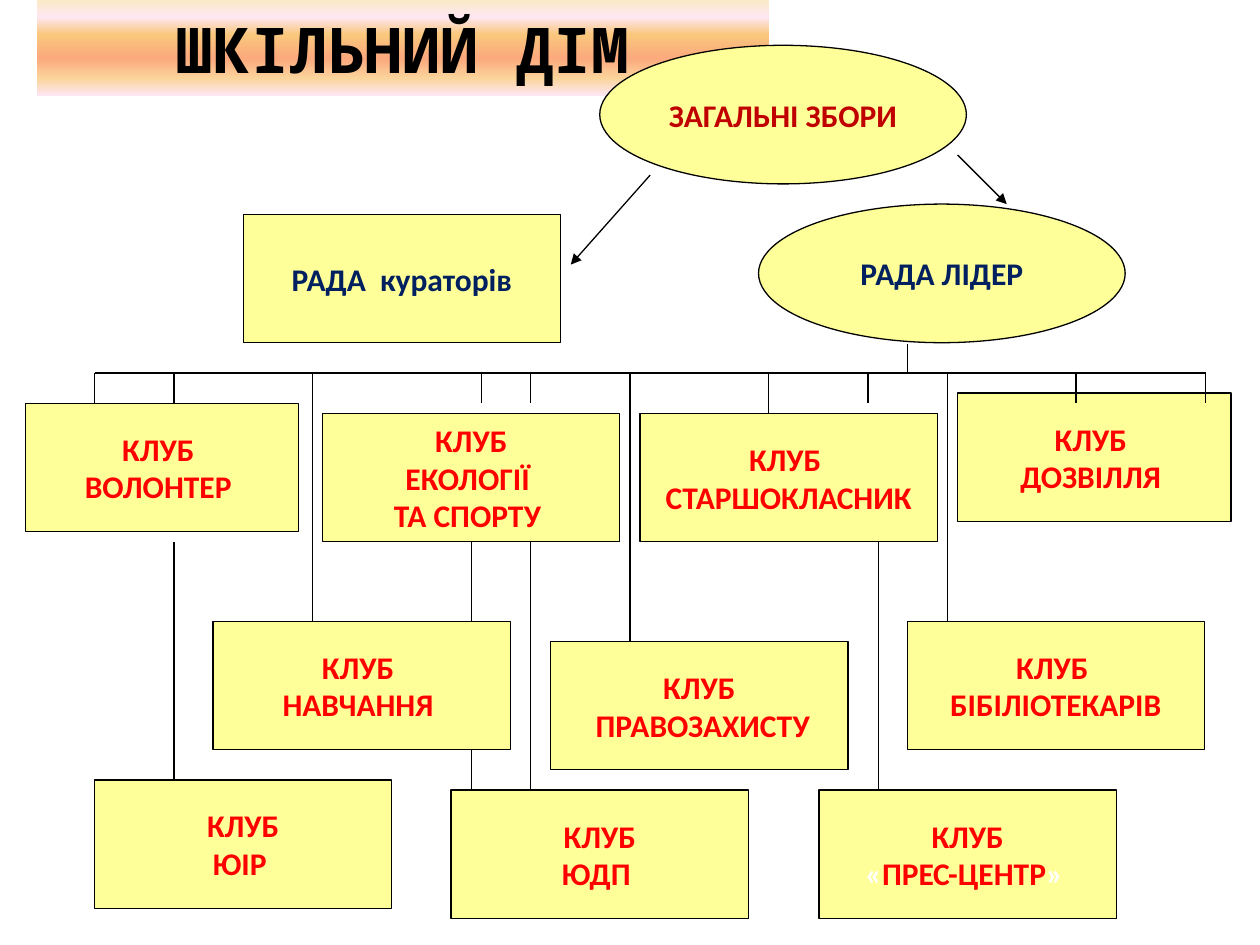
from lxml import etree
from pptx import Presentation
from pptx.dml.color import RGBColor
from pptx.enum import shapes, text
from pptx.oxml.ns import qn
from pptx.util import Inches, Pt

COLORS = {"box": "FFFF99", "line": "000000", "title": "000000", "assembly": "C00000",
          "council": "002060", "club": "FF0000", "quote": "FFFFFF"}
TITLE_STOPS = [(0, "FBEAC7"), (18, "FEE7F2"), (36, "FAC77D"),
               (61, "FBA97D"), (82, "FBD49C"), (100, "FEE7F2")]
RECT, OVAL = shapes.MSO_SHAPE.RECTANGLE, shapes.MSO_SHAPE.OVAL

prs = Presentation()
prs.slide_width, prs.slide_height = Inches(10), Inches(7.5)
s = prs.slides.add_slide(prs.slide_layouts[6])


def add_box(kind, x, y, w, h, lines, color, size=18, font="Calibri"):
    """Add a centred bold label; a line is a string or a list of (text, colour) runs."""
    sp = s.shapes.add_shape(kind, Inches(x), Inches(y), Inches(w), Inches(h))
    sp.shadow.inherit = False
    sp.fill.solid()
    sp.fill.fore_color.rgb = RGBColor.from_string(COLORS["box"])
    sp.line.color.rgb = RGBColor.from_string(COLORS["line"])
    sp.line.width = Pt(0.75)
    tf = sp.text_frame
    tf.word_wrap = False
    tf.vertical_anchor = text.MSO_ANCHOR.MIDDLE
    for i, line in enumerate(lines):
        p = tf.add_paragraph() if i else tf.paragraphs[0]
        p.alignment = text.PP_ALIGN.CENTER
        p.font.name, p.font.size, p.font.bold = font, Pt(size), True
        for content, run_color in [(line, color)] if isinstance(line, str) else line:
            r = p.add_run()
            r.text = content
            r.font.color.rgb = RGBColor.from_string(COLORS[run_color])
    return sp


def add_line(x1, y1, x2, y2, arrow=False):
    c = s.shapes.add_connector(shapes.MSO_CONNECTOR.STRAIGHT,
                               Inches(x1), Inches(y1), Inches(x2), Inches(y2))
    c.line.color.rgb = RGBColor.from_string(COLORS["line"])
    c.line.width = Pt(0.75)
    if arrow:
        etree.SubElement(c.line._get_or_add_ln(), qn("a:tailEnd"), type="triangle")
    etree.SubElement(c._element.spPr, qn("a:effectLst"))


# Title band with a vertical gradient
title = add_box(RECT, 0.29, 0, 5.81, 0.76, ["ШКІЛЬНИЙ ДІМ"], "title", 36, "Noto Sans Mono")
title.line.fill.background()
title.fill.gradient()
title.fill.gradient_angle = 270
stops = title._element.spPr.find(qn("a:gradFill")).find(qn("a:gsLst"))
for old in list(stops):
    stops.remove(old)
for pos, color in TITLE_STOPS:
    gs = etree.SubElement(stops, qn("a:gs"), pos=str(pos * 1000))
    etree.SubElement(gs, qn("a:srgbClr"), val=color)

# Governing bodies
add_box(OVAL, 4.76, 0.36, 2.91, 1.1, ["ЗАГАЛЬНІ ЗБОРИ"], "assembly")
add_box(OVAL, 6.02, 1.62, 2.91, 1.1, ["РАДА ЛІДЕР"], "council")
add_box(RECT, 1.93, 1.7, 2.52, 1.02, ["РАДА  кураторів"], "council")

# Clubs: left, top, width, lines
clubs = [
    (7.6, 3.12, 2.17, ["КЛУБ ", "ДОЗВІЛЛЯ "]),
    (0.2, 3.2, 2.17, ["КЛУБ ", "ВОЛОНТЕР "]),
    (2.56, 3.28, 2.36, ["КЛУБ", "ЕКОЛОГІЇ ", "ТА СПОРТУ "]),
    (5.08, 3.28, 2.36, ["КЛУБ ", "СТАРШОКЛАСНИК"]),
    (1.69, 4.93, 2.36, ["КЛУБ ", "НАВЧАННЯ "]),
    (4.37, 5.09, 2.36, ["КЛУБ", " ПРАВОЗАХИСТУ"]),
    (7.2, 4.93, 2.36, ["КЛУБ ", "БІБІЛІОТЕКАРІВ"]),
    (0.75, 6.19, 2.36, ["КЛУБ", "ЮІР "]),
    (3.58, 6.27, 2.36, ["КЛУБ", "ЮДП "]),
    (6.5, 6.27, 2.36, ["КЛУБ", [("«", "quote"), ("ПРЕС-ЦЕНТР", "club"), ("» ", "quote")]]),
]
for x, y, w, lines in clubs:
    add_box(RECT, x, y, w, 1.02, lines, "club")

# Arrows from the assembly to the two councils
add_line(5.16, 1.39, 4.53, 2.1, arrow=True)
add_line(7.6, 1.23, 7.99, 1.62, arrow=True)

# Bus under the leaders' council, with drops to the clubs
BUS = 2.96
add_line(7.2, 2.73, 7.2, BUS)
add_line(0.75, BUS, 9.57, BUS)
drops = [(0.75, 3.2), (1.38, 3.2), (2.48, 4.93), (3.82, 3.2), (4.21, 3.2), (5, 5.09),
         (6.1, 3.28), (6.89, 3.2), (7.52, 4.93), (8.54, 3.2), (9.57, 3.2)]
for x, bottom in drops:
    add_line(x, BUS, x, bottom)

# Links from the upper clubs down to the lowest row
for x, top, bottom in [(1.38, 4.3, 6.19), (3.74, 4.3, 4.93), (3.74, 5.95, 6.27),
                       (4.21, 4.3, 6.27), (6.97, 4.3, 6.27)]:
    add_line(x, top, x, bottom)

prs.save("out.pptx")
